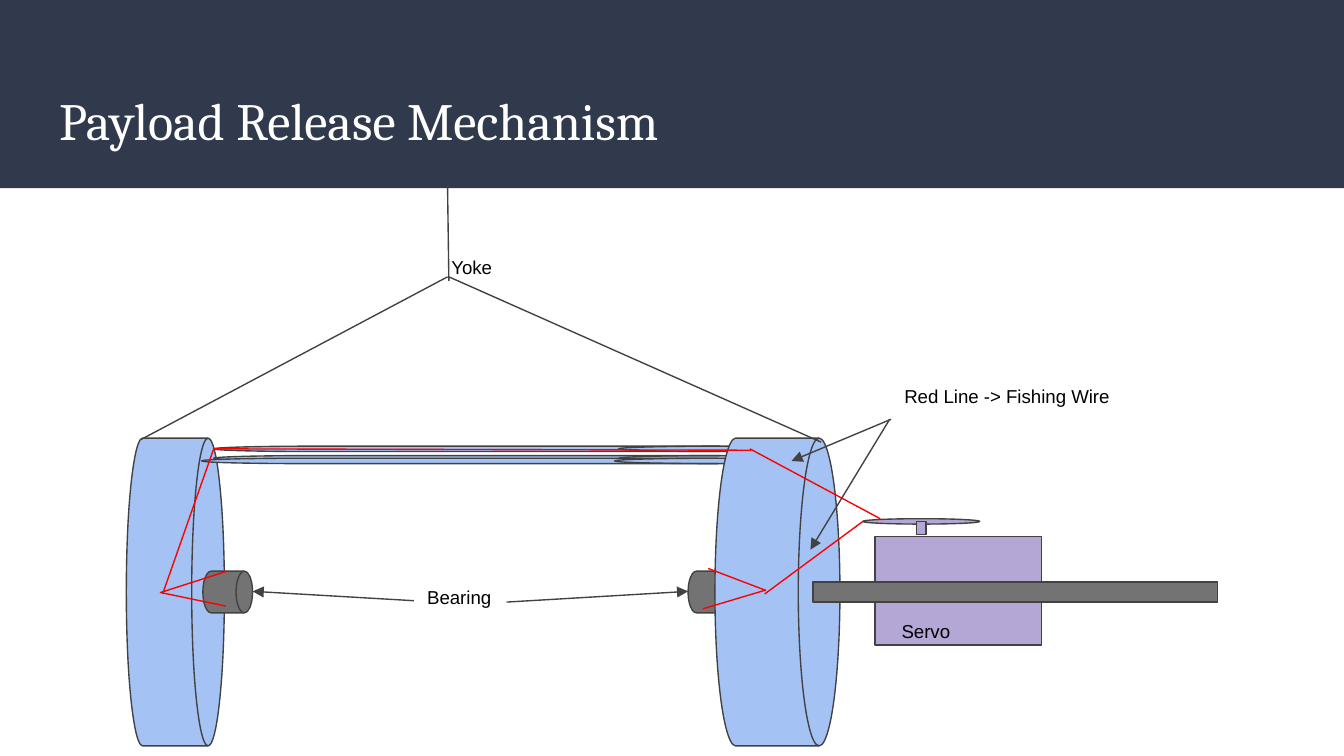
from lxml import etree
from pptx import Presentation
from pptx import util as u
from pptx.dml.color import RGBColor
from pptx.enum import shapes, text
from pptx.oxml import ns

PAGE_WIDTH = 10
PAGE_HEIGHT = PAGE_WIDTH * 9 / 16

COLORS = {
    "band": "31394D", "title": "FFFFFF", "label": "000000",
    "outline": "424242", "wire": "FF0000",
    "wheel": "A4C2F4", "metal": "737373", "servo": "B4A7D6",
}
LABEL_FONT = {"name": "Arial", "size": u.Pt(10)}
TITLE_FONT = {"name": "Cambria", "size": u.Pt(28), "bold": False}

RECT = shapes.MSO_SHAPE.RECTANGLE
OVAL = shapes.MSO_SHAPE.OVAL
DRUM = shapes.MSO_SHAPE.FLOWCHART_DIRECT_ACCESS_STORAGE

# Parts from back to front: preset, fill, (left, top, width, height)
DRUMS = [
    (DRUM, "wheel", (0.94, 3.26, 0.73, 2.29)),
    (DRUM, "wheel", (1.59, 3.39, 4.52, 0.04)),
    (DRUM, "wheel", (1.5, 3.41, 4.61, 0.04)),
    (DRUM, "wheel", (1.59, 3.32, 4.52, 0.04)),
    (DRUM, "metal", (1.51, 4.25, 0.37, 0.31)),
    (DRUM, "metal", (5.12, 4.25, 0.37, 0.31)),
    (DRUM, "wheel", (5.32, 3.26, 0.93, 2.29)),
]
SERVO_PARTS = [
    (RECT, "servo", (6.51, 3.99, 1.24, 0.81)),
    (OVAL, "servo", (6.42, 3.86, 0.87, 0.04)),
    (RECT, "servo", (6.82, 3.88, 0.07, 0.1)),
    (RECT, "metal", (6.05, 4.33, 3.01, 0.15)),
]

# Lines: (x1, y1, x2, y2)
YOKE_LINES = [(1.05, 3.27, 3.33, 2.06), (6.11, 3.29, 3.34, 2.06),
              (3.34, 2.09, 3.33, 1.38)]
LEFT_WIRES = [(1.69, 4.25, 1.19, 4.41), (1.68, 4.51, 1.2, 4.41),
              (1.21, 4.42, 1.59, 3.34), (1.59, 3.34, 5.59, 3.35)]
RIGHT_WIRES = [(5.69, 4.39, 5.27, 4.23), (5.7, 4.39, 5.23, 4.53),
               (5.69, 4.42, 6.42, 3.88), (5.58, 3.34, 6.55, 3.86)]
POINTERS = [(3.08, 4.47, 1.88, 4.4), (3.77, 4.48, 5.12, 4.4),
            (6.63, 3.12, 5.89, 3.43), (6.62, 3.12, 6.03, 4.09)]

# Labels, the last one in front of the pointers
PART_LABELS = [
    ("Yoke", (3.26, 1.8, 1.74, 0.52)),
    ("Servo", (6.61, 4.51, 1.24, 0.42)),
    ("Bearing", (3.08, 4.26, 1, 0.42)),
]
WIRE_LABEL = ("Red Line -> Fishing Wire", (6.63, 2.76, 2.05, 0.52))


def color(name):
    return RGBColor.from_string(COLORS[name])


def inches(values):
    return [u.Inches(value) for value in values]


def write(box, words, font, font_color, anchor):
    frame = box.text_frame
    settings = {"word_wrap": True, "auto_size": text.MSO_AUTO_SIZE.NONE,
                "vertical_anchor": anchor}
    for side in ("left", "top", "right", "bottom"):
        settings[f"margin_{side}"] = u.Inches(0.1)
    for key, value in settings.items():
        setattr(frame, key, value)
    para = frame.paragraphs[0]
    para.alignment = text.PP_ALIGN.LEFT
    span = para.add_run()
    span.text = words
    for key, value in font.items():
        setattr(span.font, key, value)
    span.font.color.rgb = color(font_color)


def add_part(page, preset, fill, place, outlined=True):
    part = page.shapes.add_shape(preset, *inches(place))
    part.shadow.inherit = False
    part.fill.solid()
    part.fill.fore_color.rgb = color(fill)
    if outlined:
        part.line.color.rgb = color("outline")
        part.line.width = u.Pt(0.75)
    else:
        part.line.fill.background()
    return part


def add_line(page, ends, stroke, arrow=False):
    line = page.shapes.add_connector(shapes.MSO_CONNECTOR.STRAIGHT,
                                     *inches(ends))
    line.line.color.rgb = color(stroke)
    line.line.width = u.Pt(0.75)
    if arrow:
        etree.SubElement(line.line._get_or_add_ln(), ns.qn("a:tailEnd"),
                         type="triangle")
    etree.SubElement(line._element.spPr, ns.qn("a:effectLst"))


def add_label(page, words, place):
    box = page.shapes.add_textbox(*inches(place))
    write(box, words, LABEL_FONT, "label", text.MSO_ANCHOR.TOP)


def add_title(page, words):
    title = page.shapes.title
    place = inches((0.34, 0.55, 9.32, 0.68))
    for key, value in zip(("left", "top", "width", "height"), place):
        setattr(title, key, value)
    write(title, words, TITLE_FONT, "title", text.MSO_ANCHOR.MIDDLE)
    # The band goes behind the title
    band = add_part(page, RECT, "band", (0, 0, PAGE_WIDTH, 1.4),
                    outlined=False)
    title._element.addprevious(band._element)


def main():
    deck = Presentation()
    deck.slide_width, deck.slide_height = inches((PAGE_WIDTH, PAGE_HEIGHT))
    page = deck.slides.add_slide(deck.slide_layouts[5])
    add_title(page, "Payload Release Mechanism")

    # Wheels, rods and bearings
    for part in DRUMS:
        add_part(page, *part)

    # Yoke and fishing wire
    for ends in YOKE_LINES:
        add_line(page, ends, "outline")
    for ends in LEFT_WIRES:
        add_line(page, ends, "wire")

    # Servo, with the wire that runs to it
    for part in SERVO_PARTS:
        add_part(page, *part)
    for ends in RIGHT_WIRES:
        add_line(page, ends, "wire")

    # Labels and their pointers
    for label in PART_LABELS:
        add_label(page, *label)
    for ends in POINTERS:
        add_line(page, ends, "outline", arrow=True)
    add_label(page, *WIRE_LABEL)

    deck.save("out.pptx")


if __name__ == "__main__":
    main()
